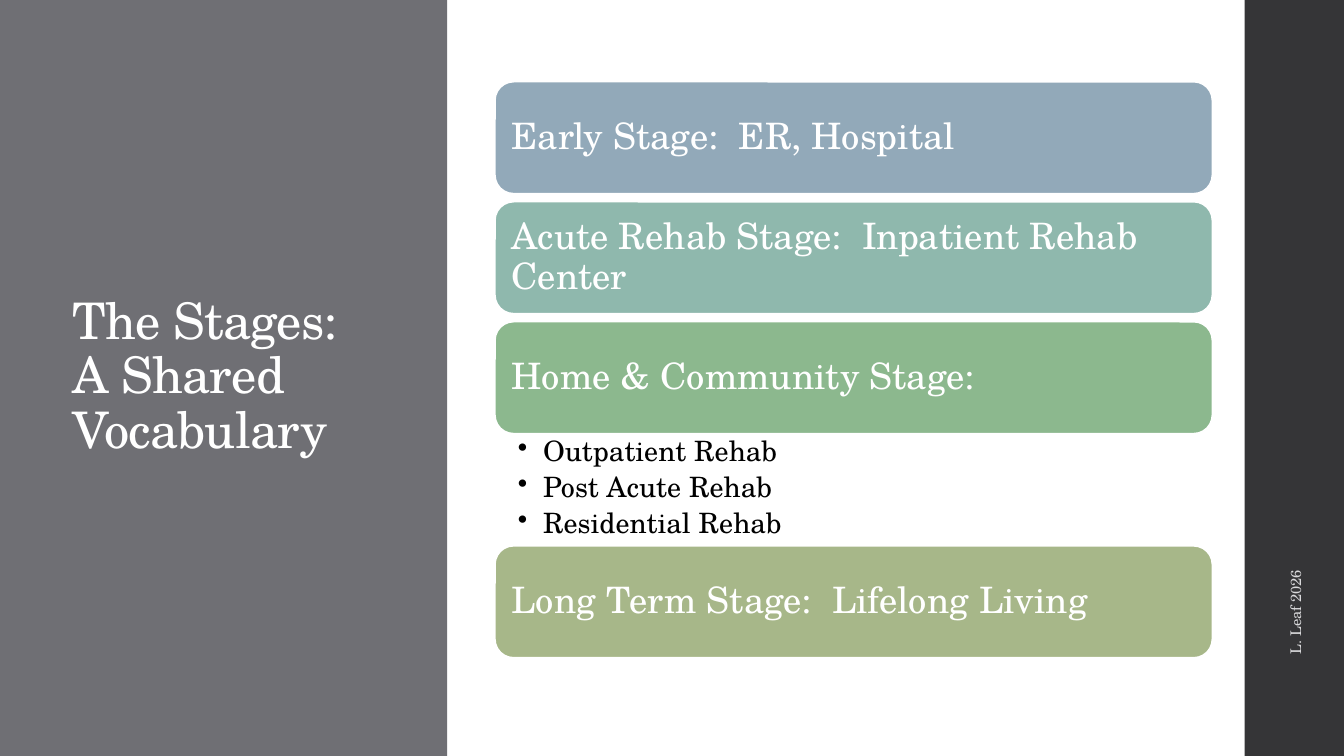
from copy import deepcopy

from lxml.etree import SubElement
from pptx import Presentation
from pptx.dml.color import RGBColor
from pptx.enum.shapes import MSO_SHAPE
from pptx.enum.text import MSO_ANCHOR, MSO_AUTO_SIZE, PP_ALIGN
from pptx.oxml.ns import qn
from pptx.util import Pt

FONT = "TeX Gyre Schola"
WHITE = RGBColor(0xFF, 0xFF, 0xFF)
BLACK = RGBColor(0x00, 0x00, 0x00)
TITLE_GRAY = RGBColor(0x6F, 0x6F, 0x74)
SIDE_GRAY = RGBColor(0x35, 0x35, 0x37)
FOOTER_GRAY = RGBColor(0xD9, 0xD9, 0xDB)
BLUE = RGBColor(0x92, 0xA9, 0xB9)
TEAL = RGBColor(0x8F, 0xB8, 0xAD)
GREEN = RGBColor(0x8C, 0xB8, 0x8E)
OLIVE = RGBColor(0xA7, 0xB7, 0x89)

STAGES = [
    ("Early Stage:  ER, Hospital", BLUE, []),
    ("Acute Rehab Stage:  Inpatient Rehab Center", TEAL, []),
    ("Home & Community Stage:", GREEN,
     ["Outpatient Rehab", "Post Acute Rehab", "Residential Rehab"]),
    ("Long Term Stage:  Lifelong Living", OLIVE, []),
]
STAGE_LEFT, STAGE_TOP, STAGE_WIDTH, STAGE_HEIGHT = 353.6, 58.4, 512.4, 79.9
STAGE_GAP, LIST_HEIGHT = 5.8, 80.2


def format_paragraph(p, size, color):
    p.alignment = PP_ALIGN.LEFT
    for r in p.runs:
        r.font.name = FONT
        r.font.size = Pt(size)
        r.font.color.rgb = color


def set_insets(tf, left, top, right, bottom):
    tf.margin_left, tf.margin_top = Pt(left), Pt(top)
    tf.margin_right, tf.margin_bottom = Pt(right), Pt(bottom)


def add_box(s, kind, left, top, width, height, fill):
    sp = s.shapes.add_shape(kind, Pt(left), Pt(top), Pt(width), Pt(height))
    sp.shadow.inherit = False
    sp.fill.solid()
    sp.fill.fore_color.rgb = fill
    sp.line.fill.background()
    return sp


def add_text_box(s, left, top, width, height):
    sp = s.shapes.add_textbox(Pt(left), Pt(top), Pt(width), Pt(height))
    sp.text_frame.word_wrap = True
    return sp


def add_stage(s, top, text, fill):
    sp = add_box(s, MSO_SHAPE.ROUNDED_RECTANGLE, STAGE_LEFT, top,
                 STAGE_WIDTH, STAGE_HEIGHT, fill)
    sp.line.color.rgb = WHITE
    sp.line.width = Pt(1.1)
    tf = sp.text_frame
    tf.word_wrap = True
    tf.vertical_anchor = MSO_ANCHOR.MIDDLE
    set_insets(tf, 8, 8, 8, 8)
    tf.text = text
    p = tf.paragraphs[0]
    p.line_spacing = 0.9
    format_paragraph(p, 26, WHITE)


def add_bullets(s, top, items):
    tf = add_text_box(s, STAGE_LEFT, top, STAGE_WIDTH, LIST_HEIGHT).text_frame
    set_insets(tf, 16.3, 2.6, 14.4, 2.6)
    tf.text = "\n".join(items)
    for p in tf.paragraphs:
        pPr = p._p.get_or_add_pPr()
        pPr.set("marL", str(Pt(18)))
        pPr.set("indent", str(Pt(-18)))
        SubElement(pPr, qn("a:buChar")).set("char", "•")
        p.level = 1
        p.line_spacing = 0.9
        p.space_after = Pt(4)
        format_paragraph(p, 20, BLACK)


def add_stages(s):
    top = STAGE_TOP
    for text, fill, items in STAGES:
        add_stage(s, top, text, fill)
        top += STAGE_HEIGHT
        if items:
            add_bullets(s, top, items)
            top += LIST_HEIGHT
        else:
            top += STAGE_GAP


def format_title(s):
    sp = s.shapes.title
    s.shapes._spTree.append(sp._element)
    sp.left, sp.top, sp.width, sp.height = Pt(44.6), Pt(65.5), Pt(248.4), Pt(408.2)
    tf = sp.text_frame
    tf.word_wrap = True
    tf.auto_size = MSO_AUTO_SIZE.NONE
    tf.vertical_anchor = MSO_ANCHOR.MIDDLE
    tf.text = "The Stages: \vA Shared Vocabulary"
    p = tf.paragraphs[0]
    p.line_spacing = 0.9
    format_paragraph(p, 36, WHITE)
    for r in p.runs:
        r.font._element.set("spc", "-50")
    for br in p._p.findall(qn("a:br")):
        br.insert(0, deepcopy(p.runs[0].font._element))


def add_footer(s):
    sp = add_text_box(s, 784.1, 319, 282.2, 28.8)
    sp.rotation = 270
    tf = sp.text_frame
    tf.vertical_anchor = MSO_ANCHOR.MIDDLE
    tf.text = "L. Leaf 2026"
    format_paragraph(tf.paragraphs[0], 10.5, FOOTER_GRAY)


def main():
    prs = Presentation()
    prs.slide_width, prs.slide_height = Pt(960), Pt(540)
    s = prs.slides.add_slide(prs.slide_layouts[5])
    add_box(s, MSO_SHAPE.RECTANGLE, 0, 0, 319.5, 540, TITLE_GRAY)
    add_box(s, MSO_SHAPE.RECTANGLE, 889, 0, 71, 540, SIDE_GRAY)
    format_title(s)
    add_stages(s)
    add_footer(s)
    prs.save("out.pptx")


if __name__ == "__main__":
    main()
